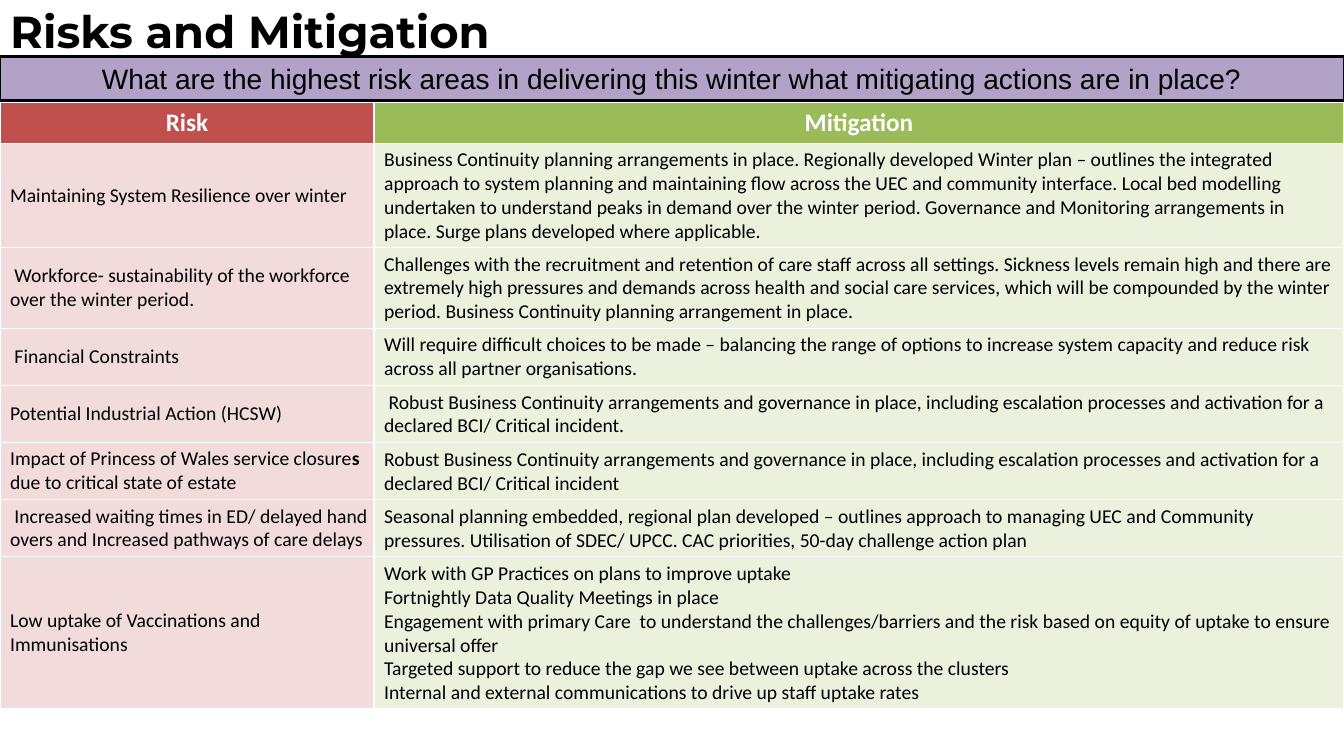
from lxml import etree
from pptx import Presentation
from pptx.dml.color import RGBColor
from pptx.enum.shapes import MSO_SHAPE as Shape
from pptx.enum.text import MSO_ANCHOR as Anchor, MSO_AUTO_SIZE as Fit, PP_ALIGN as Align
from pptx.oxml.ns import qn
from pptx.util import Inches, Pt

RED, GREEN = "C0504D", "9BBB59"


def paint(fill, color, alpha=None):
    """Fill with a hex colour; alpha is the opacity in percent."""
    fill.solid()
    fill.fore_color.rgb = RGBColor.from_string(color)
    if alpha:
        for node in fill._xPr.iter(qn("a:srgbClr")):
            etree.SubElement(node, qn("a:alpha")).set("val", str(alpha * 1000))


def write(para, text, size, color="000000", face="Calibri", bold=False):
    run = para.add_run()
    run.text = text
    run.font.size = Pt(size)
    run.font.name = face
    run.font.bold = bold
    paint(run.font.fill, color)


prs = Presentation()
prs.slide_width, prs.slide_height = Inches(13.33), Inches(7.5)
slide = prs.slides.add_slide(prs.slide_layouts[5])

# Title
title = slide.shapes.title
title.left, title.top = Inches(0), Inches(0.05)
title.width, title.height = Inches(13.33), Inches(0.59)
frame = title.text_frame
frame.word_wrap = True
frame.auto_size = Fit.SHAPE_TO_FIT_TEXT
frame.vertical_anchor = Anchor.TOP
para = frame.paragraphs[0]
para.alignment = Align.LEFT
para.line_spacing = 0.9
write(para, "Risks and Mitigation", 32, face="Montserrat", bold=True)

# Question banner
banner = slide.shapes.add_shape(Shape.RECTANGLE, Inches(0), Inches(0.56), Inches(13.33), Inches(0.44))
banner.shadow.inherit = False
paint(banner.fill, "B3A2C7")
paint(banner.line.fill, "000000")
banner.line.width = Pt(2)
banner.text_frame.vertical_anchor = Anchor.MIDDLE
para = banner.text_frame.paragraphs[0]
para.alignment = Align.CENTER
write(para, "What are the highest risk areas in delivering this winter what mitigating actions are in place?",
      20, face="Arial")

# Risk table: each row holds the runs of the risk and the paragraphs of the mitigation
rows = [
    (0.39, ["Risk"], ["Mitigation"]),
    (1, ["Maintaining System Resilience over winter"],
     ["Business Continuity planning arrangements in place. Regionally developed Winter plan – outlines the "
      "integrated approach to system planning and maintaining flow across the UEC and community interface. "
      "Local bed modelling undertaken to understand peaks in demand over the winter period. Governance and "
      "Monitoring arrangements in place. Surge plans developed where applicable."]),
    (0.78, [" Workforce- sustainability of the workforce over the winter period."],
     ["Challenges with the recruitment and retention of care staff across all settings. Sickness levels remain "
      "high and there are extremely high pressures and demands across health and social care services, which "
      "will be compounded by the winter period. Business Continuity planning arrangement in place."]),
    (0.55, [" Financial Constraints"],
     ["Will require difficult choices to be made – balancing the range of options to increase system capacity "
      "and reduce risk across all partner organisations."]),
    (0.55, ["Potential Industrial Action (HCSW)"],
     [" Robust Business Continuity arrangements and governance in place, including escalation processes and "
      "activation for a declared BCI/ Critical incident."]),
    (0.55, ["Impact of Princess of Wales service closure", "s", " due to critical state of estate"],
     ["Robust Business Continuity arrangements and governance in place, including escalation processes and "
      "activation for a declared BCI/ Critical incident"]),
    (0.55, [" Increased waiting times in ED/ delayed hand overs and Increased pathways of care delays"],
     ["Seasonal planning embedded, regional plan developed – outlines approach to managing UEC and Community "
      "pressures. Utilisation of SDEC/ UPCC. CAC priorities, 50-day challenge action plan"]),
    (1.46, ["Low uptake of Vaccinations and Immunisations"],
     ["Work with GP Practices on plans to improve uptake",
      "Fortnightly Data Quality Meetings in place",
      "Engagement with primary Care  to understand the challenges/barriers and the risk based on equity of "
      "uptake to ensure universal offer",
      "Targeted support to reduce the gap we see between uptake across the clusters",
      "Internal and external communications to drive up staff uptake rates"]),
]
table = slide.shapes.add_table(len(rows), 2, Inches(0), Inches(1.02), Inches(13.33), Inches(5.83)).table
table.columns[0].width, table.columns[1].width = Inches(3.71), Inches(9.62)

for i, (height, risk, steps) in enumerate(rows):
    table.rows[i].height = Inches(height)
    head = i == 0
    look = (18, "FFFFFF", "Calibri", True) if head else (14,)
    left, right = table.cell(i, 0), table.cell(i, 1)
    for cell, color in (left, RED), (right, GREEN):
        paint(cell.fill, color, None if head else 20)
        cell.vertical_anchor = Anchor.MIDDLE
    if i >= 5:
        left.margin_left = left.margin_right = left.margin_top = left.margin_bottom = 0
        left.text_frame.paragraphs[0]._p.get_or_add_pPr().set("marL", str(Inches(0.1)))
    for text in risk:
        write(left.text_frame.paragraphs[0], text, *look)
    if len(risk) > 1:
        left.text_frame.paragraphs[0].runs[1].font.bold = True
    for j, text in enumerate(steps):
        frame = right.text_frame
        write(frame.add_paragraph() if j else frame.paragraphs[0], text, *look)
    if head:
        for cell in left, right:
            cell.text_frame.paragraphs[0].alignment = Align.CENTER

prs.save("out.pptx")
